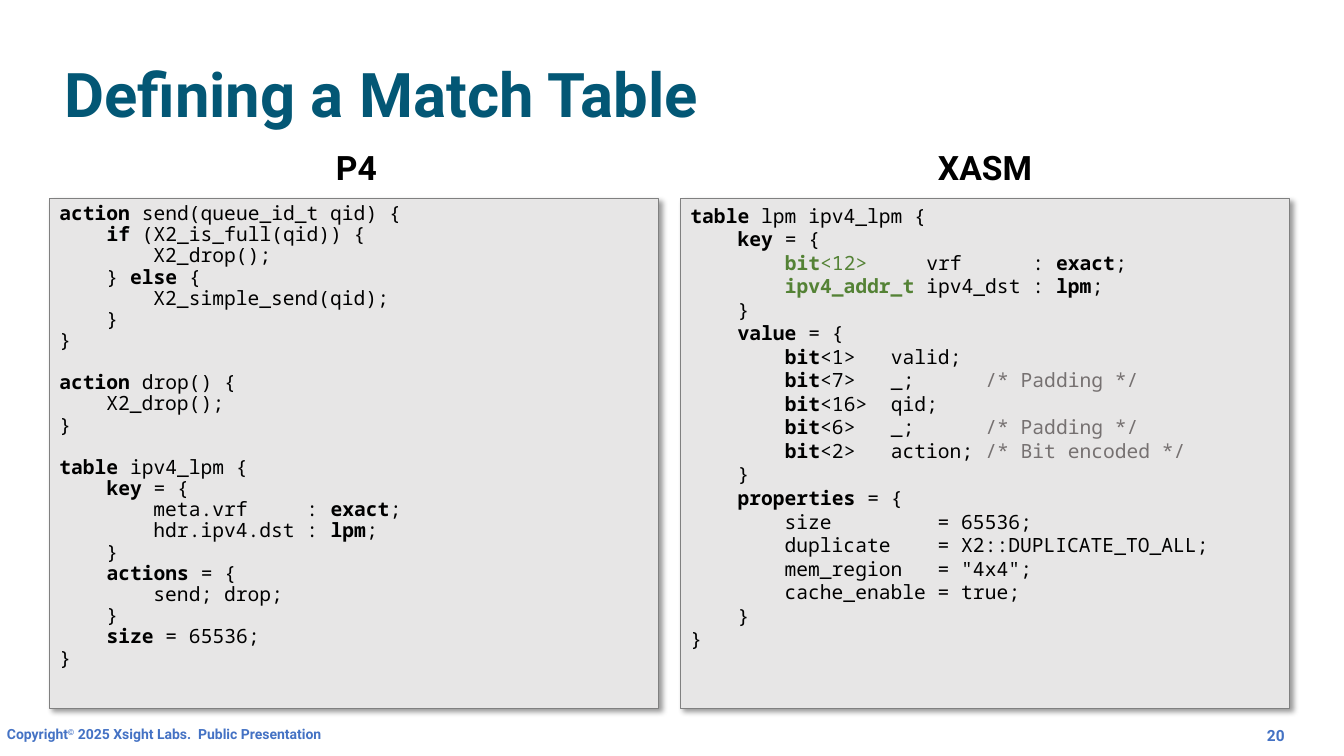
from lxml.etree import SubElement
from pptx import Presentation
from pptx.dml.color import RGBColor
from pptx.enum.shapes import MSO_SHAPE
from pptx.enum.text import MSO_ANCHOR, PP_ALIGN
from pptx.oxml.ns import qn
from pptx.util import Inches, Pt

# Code markup: ` toggles bold, ~ toggles green, ^ toggles grey
P4 = """\
`action` send(queue_id_t qid) {
    `if` (X2_is_full(qid)) {
        X2_drop();
    } `else` {
        X2_simple_send(qid);
    }
}

`action` drop() {
    X2_drop();
}

`table` ipv4_lpm {
    `key` = {
        meta.vrf     : `exact`;
        hdr.ipv4.dst : `lpm`;
    }
    `actions` = {
        send; drop;
    }
    `size` = 65536;
}"""

XASM = """\
`table` lpm ipv4_lpm {
    `key` = {
        ~`bit`<12>     ~vrf      : `exact`;
        ~`ipv4_addr_t `~ipv4_dst : `lpm`;
    }
    `value` = {
        `bit`<1>   valid;
        `bit`<7>   _;      ^/* Padding */^
        `bit`<16>  qid;
        `bit`<6>   _;      ^/* Padding */^
        `bit`<2>   action; ^/* Bit encoded */^
    }
    `properties` = {
        size         = 65536;
        duplicate    = X2::DUPLICATE_TO_ALL;
        mem_region   = "4x4";
        cache_enable = true;
    }
}"""


def color(code):
    return RGBColor.from_string(code)


class Deck:
    sans, mono = "Roboto", "Noto Sans Mono"
    teal, blue, black = "035775", "4472C4", "000000"
    green, grey, panel, edge = "548235", "767171", "E7E6E6", "808080"

    def __init__(self):
        self.prs = Presentation()
        self.prs.slide_width = Inches(13.33)
        self.prs.slide_height = Inches(7.5)
        self.slide = self.prs.slides.add_slide(self.prs.slide_layouts[6])

    def run(self, par, text, face, size, tint, bold=True):
        run = par.add_run()
        run.text = text
        font = run.font
        font.name, font.size, font.bold = face, Pt(size), bold
        font.color.rgb = color(tint)
        return run

    def text(self, box, parts, size, tint, align=PP_ALIGN.LEFT,
             anchor=MSO_ANCHOR.MIDDLE, pitch=1.0):
        frame = self.slide.shapes.add_textbox(*map(Inches, box)).text_frame
        frame.word_wrap = True
        frame.vertical_anchor = anchor
        par = frame.paragraphs[0]
        par.alignment, par.line_spacing = align, pitch
        return [self.run(par, part, self.sans, size, tint) for part in parts]

    def shade(self, shape):
        shape.shadow.inherit = False
        effects = shape._element.spPr.find(qn("a:effectLst"))
        drop = SubElement(effects, qn("a:outerShdw"), blurRad=str(Pt(4)),
                          dist=str(Pt(3)), dir="2700000", algn="tl",
                          rotWithShape="0")
        tint = SubElement(drop, qn("a:srgbClr"), val=self.black)
        SubElement(tint, qn("a:alpha"), val="40000")

    def line(self, par, line):
        marks = {"`": False, "~": False, "^": False}
        chunk = ""
        for char in line + "`":
            if char not in marks:
                chunk += char
                continue
            if chunk:
                tint = (self.green if marks["~"] else
                        self.grey if marks["^"] else self.black)
                self.run(par, chunk, self.mono, 14, tint, marks["`"])
            chunk = ""
            marks[char] = not marks[char]

    def code(self, box, source, pitch):
        shape = self.slide.shapes.add_shape(MSO_SHAPE.RECTANGLE,
                                            *map(Inches, box))
        shape.fill.solid()
        shape.fill.fore_color.rgb = color(self.panel)
        shape.line.color.rgb = color(self.edge)
        shape.line.width = Pt(0.75)
        self.shade(shape)
        frame = shape.text_frame
        frame.word_wrap = True
        frame.vertical_anchor = MSO_ANCHOR.TOP
        par, gap = frame.paragraphs[0], False
        for row, line in enumerate(source.split("\n")):
            if not line:
                gap = True
                continue
            if row:
                par = frame.add_paragraph()
            par.alignment, par.line_spacing = PP_ALIGN.LEFT, pitch
            if gap:
                par.space_before = Pt(15)
            gap = False
            self.line(par, line)


def main():
    deck = Deck()

    # Title
    deck.text((0.54, 0.24, 10.05, 1.45), ["Defining a Match Table"],
              44, deck.teal, pitch=0.9)

    # Headed code panels
    for name, source, head, wide, left, pitch in (
            ("P4", P4, 0.54, 5.99, 0.49, 0.9),
            ("XASM", XASM, 6.75, 6.04, 6.75, 1.0)):
        deck.text((head, 1.38, wide, 0.6), [name], 24, deck.black,
                  PP_ALIGN.CENTER, pitch=0.9)
        deck.code((left, 1.97, 6.04, 5.06), source, pitch)

    # Footer
    parts = ["Copyright", "©", " 2025 Xsight Labs.  Public Presentation"]
    runs = deck.text((-0.03, 7.15, 4.18, 0.27), parts, 10, deck.blue,
                     anchor=MSO_ANCHOR.TOP)
    runs[1].font._element.set("baseline", "30000")
    deck.text((12.04, 7.03, 0.8, 0.53), ["20"], 11, deck.blue,
              PP_ALIGN.RIGHT)

    deck.prs.save("out.pptx")


if __name__ == "__main__":
    main()
